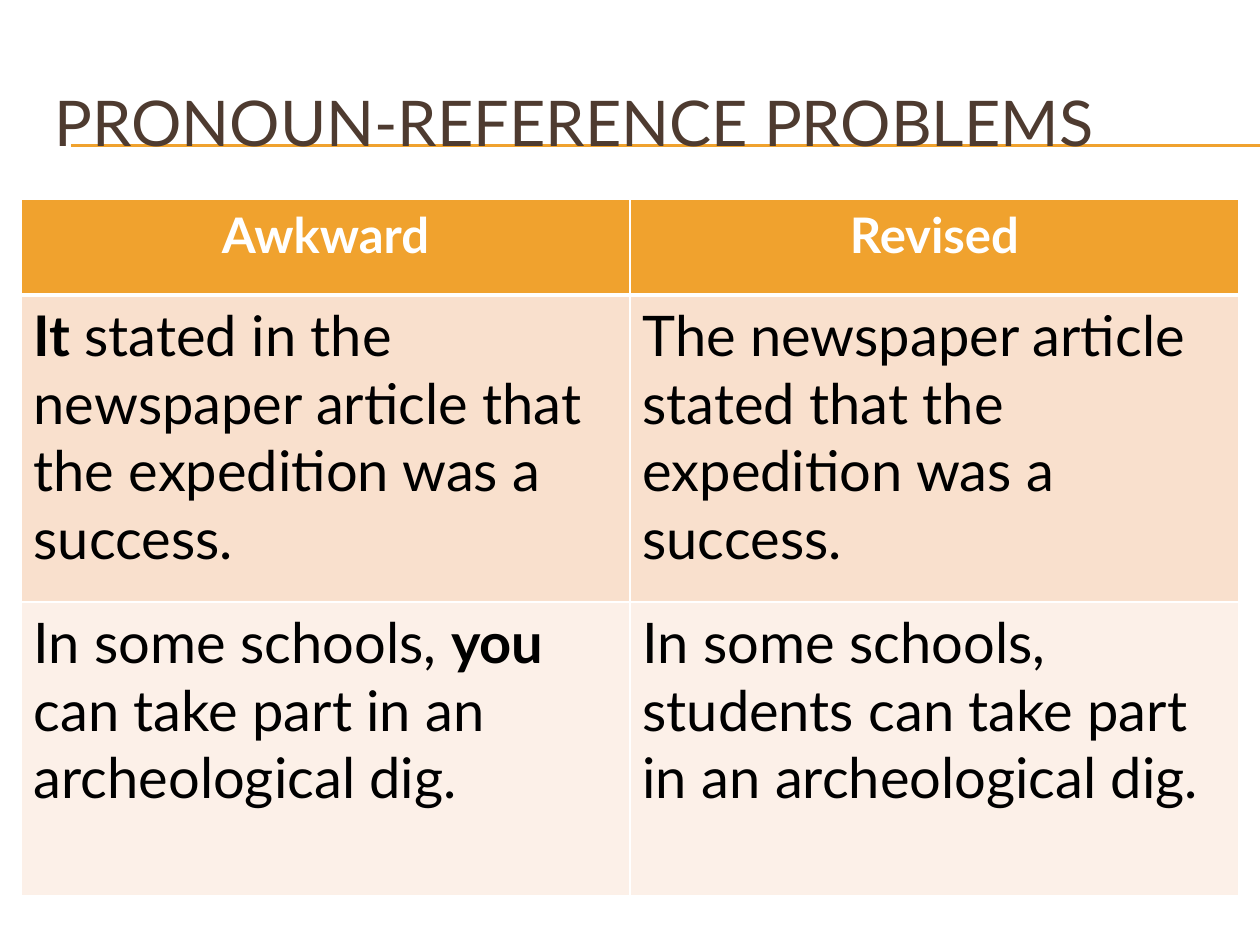
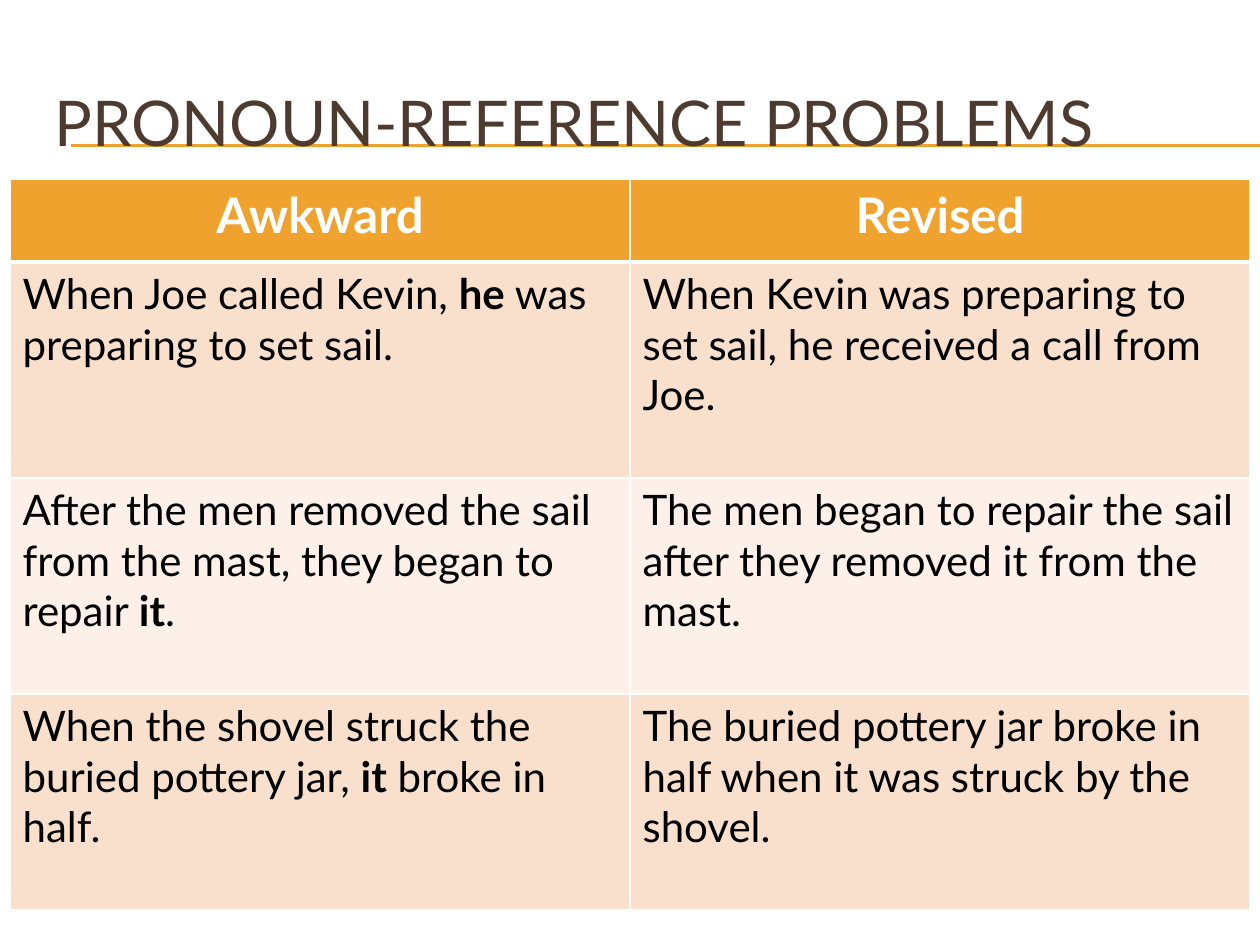
from lxml import etree
from pptx import Presentation
from pptx.dml.color import RGBColor
from pptx.enum import shapes, text
from pptx.oxml.ns import qn
from pptx.util import Emu, Pt

EMU_PER_PX = 914400 / 126
FONT = "Lato"
ORANGE = RGBColor(0xF0, 0xA2, 0x2E)
BROWN = RGBColor(0x4E, 0x3B, 0x30)
BLACK = RGBColor(0x00, 0x00, 0x00)
WHITE = RGBColor(0xFF, 0xFF, 0xFF)
BANDS = (RGBColor(0xF9, 0xE0, 0xCD), RGBColor(0xFC, 0xF0, 0xE8))

TITLE = "PRONOUN-REFERENCE PROBLEMS"
HEADER = ("Awkward", "Revised")

# Double asterisks enclose bold words.
GENERAL_EXAMPLES = [
    ("**It** stated in the newspaper article that the expedition was a success.",
     "The newspaper article stated that the expedition was a success."),
    ("In some schools, **you** can take part in an archeological dig.",
     "In some schools, students can take part in an archeological dig."),
]
AMBIGUOUS_EXAMPLES = [
    ("When Joe called Kevin, **he** was preparing to set sail.",
     "When Kevin was preparing to set sail, he received a call from Joe."),
    ("After the men removed the sail from the mast, they began to repair **it**.",
     "The men began to repair the sail after they removed it from the mast."),
    ("When the shovel struck the buried pottery jar, **it** broke in half.",
     "The buried pottery jar broke in half when it was struck by the shovel."),
]


def px(*values):
    return [Emu(round(v * EMU_PER_PX)) for v in values]


def add_run(p, words, color, **font):
    r = p.add_run()
    r.text = words
    for name, value in {"name": FONT, **font}.items():
        setattr(r.font, name, value)
    r.font.color.rgb = color


def add_rule(slide, y):
    """Draw a thin line from the title's left edge to the slide's right edge."""
    line = slide.shapes.add_connector(
        shapes.MSO_CONNECTOR.STRAIGHT, *px(71, y, 1260, y))
    line.line.color.rgb = ORANGE
    line.line.width = Pt(0.75)
    etree.SubElement(line._element.spPr, qn("a:effectLst"))


def add_title(slide):
    tf = slide.shapes.add_textbox(*px(42, 63, 1197, 116)).text_frame
    tf.word_wrap = True
    tf.vertical_anchor = text.MSO_ANCHOR.MIDDLE
    add_run(tf.paragraphs[0], TITLE, BROWN, size=Pt(36))


def set_borders(cell, top, bottom):
    """Give a cell white borders; top and bottom widths are in points."""
    tc_pr = cell._tc.get_or_add_tcPr()
    for side, width in {"L": 1, "R": 1, "T": top, "B": bottom}.items():
        ln = etree.SubElement(tc_pr, qn(f"a:ln{side}"), w=str(Pt(width)))
        fill = etree.SubElement(ln, qn("a:solidFill"))
        etree.SubElement(fill, qn("a:srgbClr"), val=str(WHITE))


def fill_cell(cell, words, row, size):
    is_header = row == 0
    set_borders(cell, 3 if row == 1 else 1, 3 if is_header else 1)
    cell.fill.solid()
    cell.fill.fore_color.rgb = ORANGE if is_header else BANDS[(row - 1) % 2]
    p = cell.text_frame.paragraphs[0]
    if is_header:
        p.alignment = text.PP_ALIGN.CENTER
        add_run(p, words, WHITE, size=Pt(28), bold=True)
        return
    for i, part in enumerate(words.split("**")):
        if part:
            add_run(p, part, BLACK, size=Pt(size), bold=i % 2 == 1)


def add_comparison(slide, examples, left, top, col_width, row_heights, size):
    rows = [HEADER, *examples]
    table = slide.shapes.add_table(
        len(rows), 2, *px(left, top, 2 * col_width, sum(row_heights))).table
    for column in table.columns:
        column.width = px(col_width)[0]
    for i, (words, height) in enumerate(zip(rows, row_heights)):
        table.rows[i].height = px(height)[0]
        for j, phrase in enumerate(words):
            fill_cell(table.cell(i, j), phrase, i, size)


def add_problem_slide(prs, examples, **layout):
    slide = prs.slides.add_slide(prs.slide_layouts[6])
    for y in (145, 146):
        add_rule(slide, y)
    add_title(slide)
    add_comparison(slide, examples, **layout)


def main():
    prs = Presentation()
    prs.slide_width, prs.slide_height = px(1260, 945)
    add_problem_slide(prs, GENERAL_EXAMPLES, left=21, top=199, col_width=609,
                      row_heights=(96, 307, 294), size=32)
    add_problem_slide(prs, AMBIGUOUS_EXAMPLES, left=10, top=179, col_width=620,
                      row_heights=(83, 216, 216, 216), size=24)
    prs.save("out.pptx")


if __name__ == "__main__":
    main()
